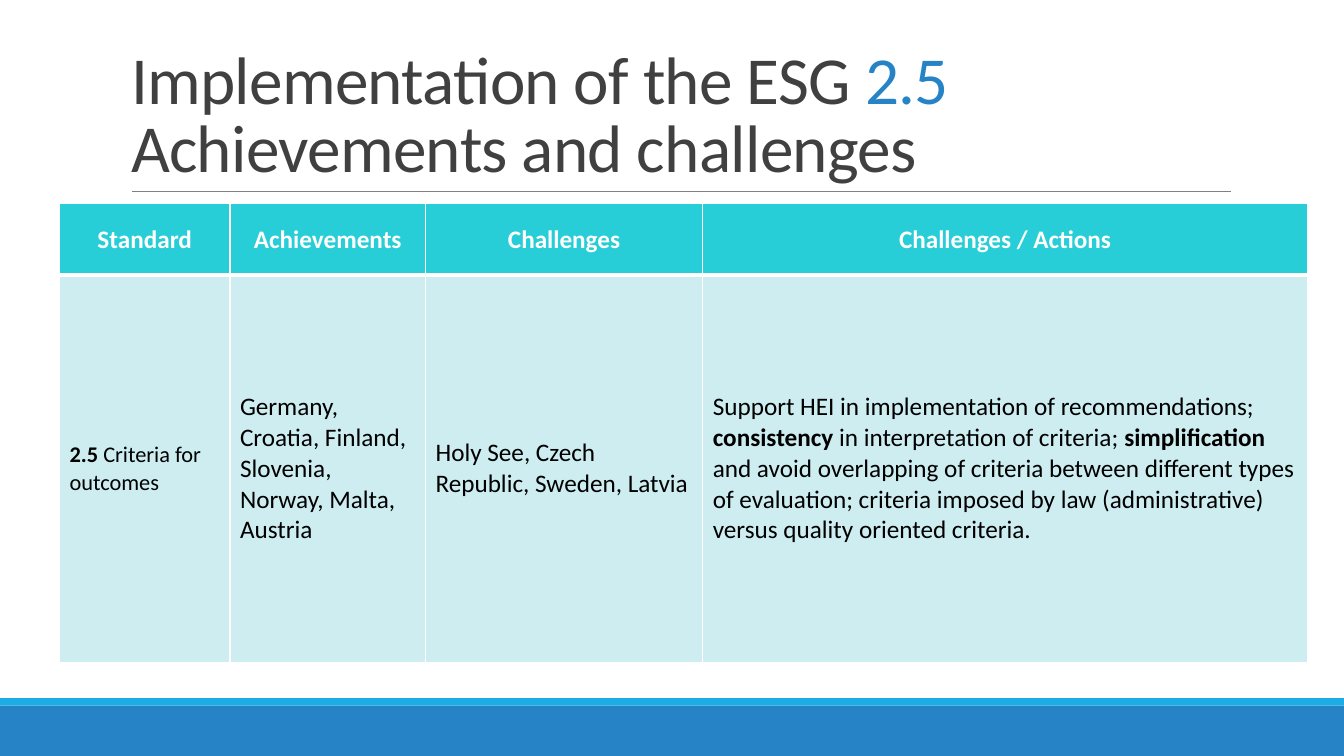
"""Build the ESG 2.5 slide with its title, rule, footer bars and table."""
from dataclasses import dataclass

from lxml import etree
from pptx import Presentation
from pptx import util as u
from pptx.dml.color import RGBColor
from pptx.enum import shapes, text
from pptx.oxml import ns


@dataclass(frozen=True)
class Theme:
    font: str = "Calibri"
    white: str = "FFFFFF"
    black: str = "000000"
    dark: str = "404040"
    gray: str = "808080"
    blue: str = "2683C6"
    sky: str = "1CADE4"
    teal: str = "27CED7"
    pale: str = "CDEDF0"
    head: int = 48
    body: int = 18
    small: int = 16


@dataclass(frozen=True)
class Piece:
    words: str
    color: str = Theme.black
    size: int = Theme.body
    bold: bool = False


@dataclass(frozen=True)
class Bar:
    top: float
    high: float
    color: str


@dataclass(frozen=True)
class Column:
    share: float
    label: str
    body: tuple[Piece, ...]


LOOK = Theme()
WIDE, HIGH = u.Inches(13.33), u.Inches(7.5)

TITLE = (
    Piece("Implementation of the ESG ", LOOK.dark, LOOK.head),
    Piece("2.5 ", LOOK.blue, LOOK.head),
    Piece("Achievements and challenges", LOOK.dark, LOOK.head),
)
BARS = (Bar(93.33, 6.67, LOOK.blue), Bar(92.33, 1, LOOK.sky))
ROWS = (9.47, 51.2)
COLUMNS = (
    Column(12.68, "Standard", (
        Piece("2.5 ", size=LOOK.small, bold=True),
        Piece("Criteria for outcomes", size=LOOK.small),
    )),
    Column(14.55, "Achievements", (
        Piece("Germany, Croatia, Finland, Slovenia, Norway, Malta, Austria"),
    )),
    Column(20.63, "Challenges", (
        Piece("Holy See, Czech Republic, Sweden, Latvia"),
    )),
    Column(45.01, "Challenges / Actions", (
        Piece("Support HEI in implementation of recommendations; "),
        Piece("consistency", bold=True),
        Piece(" in interpretation of criteria; "),
        Piece("simplification", bold=True),
        Piece(" and avoid overlapping of criteria between different types of "
              "evaluation; criteria imposed by law (administrative) versus "
              "quality oriented criteria."),
    )),
)


def across(share: float) -> int:
    return round(WIDE * share / 100)


def down(share: float) -> int:
    return round(HIGH * share / 100)


def tint(code: str) -> RGBColor:
    return RGBColor.from_string(code)


def write(line, pieces: tuple[Piece, ...], align) -> None:
    line.alignment = align
    for piece in pieces:
        run = line.add_run()
        run.text = piece.words
        run.font.name = LOOK.font
        run.font.size = u.Pt(piece.size)
        run.font.bold = piece.bold
        run.font.color.rgb = tint(piece.color)


def draw_bar(slide, bar: Bar) -> None:
    shape = slide.shapes.add_shape(
        shapes.MSO_SHAPE.RECTANGLE, 0, down(bar.top), WIDE, down(bar.high))
    shape.shadow.inherit = False
    shape.fill.solid()
    shape.fill.fore_color.rgb = tint(bar.color)
    shape.line.fill.background()


def draw_rule(slide) -> None:
    rule = slide.shapes.add_connector(
        shapes.MSO_CONNECTOR.STRAIGHT,
        across(9.83), down(25.33), across(91.6), down(25.33))
    rule.line.color.rgb = tint(LOOK.gray)
    rule.line.width = u.Pt(0.5)
    etree.SubElement(rule._element.spPr, ns.qn("a:effectLst"))


def draw_title(slide) -> None:
    title = slide.shapes.title
    title.left, title.top = across(9), down(4.13)
    title.width, title.height = across(82.52), down(21.2)
    frame = title.text_frame
    frame.word_wrap = True
    frame.auto_size = text.MSO_AUTO_SIZE.NONE
    frame.vertical_anchor = text.MSO_ANCHOR.BOTTOM
    line = frame.paragraphs[0]
    line.line_spacing = 0.85
    write(line, TITLE, text.PP_ALIGN.LEFT)
    for run in line.runs:
        run._r.get_or_add_rPr().set("spc", "-50")


def edge(cell, side: str, width: float) -> None:
    line = etree.SubElement(
        cell._tc.get_or_add_tcPr(), ns.qn(f"a:ln{side}"), w=str(u.Pt(width)))
    fill = etree.SubElement(line, ns.qn("a:solidFill"))
    etree.SubElement(fill, ns.qn("a:srgbClr"), val=LOOK.white)


def fill_cell(cell, pieces: tuple[Piece, ...], color: str, align,
              thick: str) -> None:
    for side in "LRTB":
        edge(cell, side, 3 if side == thick else 1)
    cell.fill.solid()
    cell.fill.fore_color.rgb = tint(color)
    cell.vertical_anchor = text.MSO_ANCHOR.MIDDLE
    write(cell.text_frame.paragraphs[0], pieces, align)


def draw_table(slide) -> None:
    table = slide.shapes.add_table(
        len(ROWS), len(COLUMNS), across(4.43), down(26.93),
        across(sum(col.share for col in COLUMNS)), down(sum(ROWS))).table
    for row, share in zip(table.rows, ROWS):
        row.height = down(share)
    for i, col in enumerate(COLUMNS):
        table.columns[i].width = across(col.share)
        label = (Piece(col.label, LOOK.white, bold=True),)
        fill_cell(table.cell(0, i), label, LOOK.teal,
                  text.PP_ALIGN.CENTER, "B")
        fill_cell(table.cell(1, i), col.body, LOOK.pale,
                  text.PP_ALIGN.LEFT, "T")


def main() -> None:
    deck = Presentation()
    deck.slide_width, deck.slide_height = WIDE, HIGH
    slide = deck.slides.add_slide(deck.slide_layouts.get_by_name("Title Only"))
    for bar in BARS:
        draw_bar(slide, bar)
    draw_rule(slide)
    draw_title(slide)
    draw_table(slide)
    deck.save("out.pptx")


if __name__ == "__main__":
    main()
